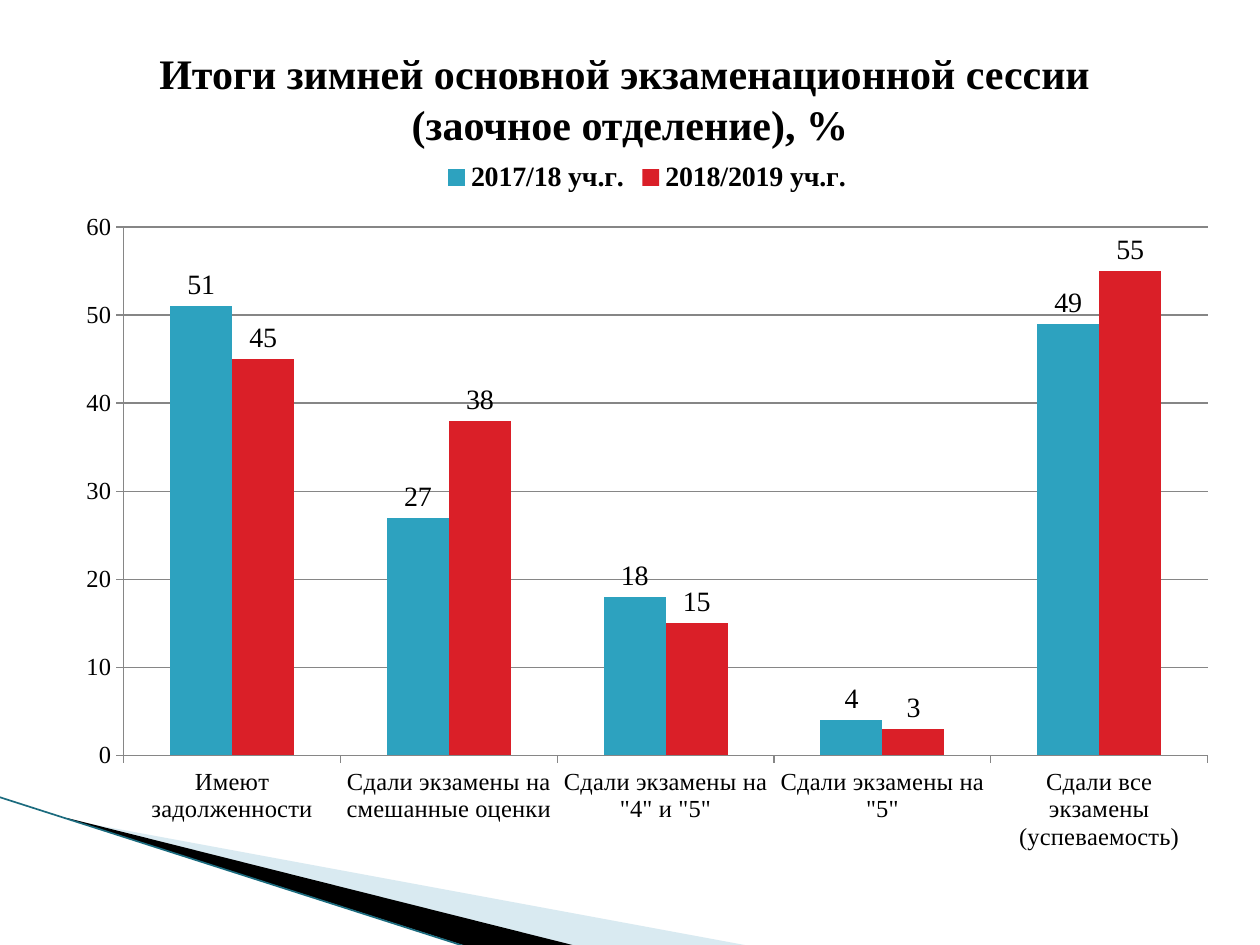
from dataclasses import dataclass, field

from lxml.etree import SubElement
from pptx import Presentation
from pptx.chart.data import CategoryChartData
from pptx.dml.color import RGBColor
from pptx.enum.chart import XL_CHART_TYPE, XL_LABEL_POSITION, XL_LEGEND_POSITION, XL_TICK_MARK
from pptx.enum.shapes import MSO_CONNECTOR
from pptx.enum.text import MSO_ANCHOR, PP_ALIGN
from pptx.oxml.ns import qn
from pptx.util import Pt

EMU_PER_PX = 914400 / 126
COLORS = {
    "text": "000000",
    "grid": "868686",
    "previous": "2DA2BF",
    "current": "DA1F28",
    "pale": "A0CBDC",
    "dark": "000000",
    "edge": "1B6B7E",
}
CATEGORIES = [
    "Имеют задолженности",
    "Сдали экзамены на смешанные оценки",
    'Сдали экзамены на "4" и "5"',
    'Сдали экзамены на "5"',
    "Сдали все экзамены (успеваемость)",
]
SERIES = [
    ("2017/18 уч.г.", "previous", (51, 27, 18, 4, 49)),
    ("2018/2019 уч.г.", "current", (45, 38, 15, 3, 55)),
]


def emu(*lengths):
    return [round(length * EMU_PER_PX) for length in lengths]


@dataclass
class SlideBuilder:
    """Holds the style and the current slide, and adds each kind of element."""

    page: object
    font_name: str = "Times New Roman"
    colors: dict = field(default_factory=lambda: COLORS)

    def color(self, name):
        return RGBColor.from_string(self.colors[name])

    def style_font(self, font, size, bold=False):
        font.name = self.font_name
        font.size = Pt(size)
        font.bold = bold
        font.color.rgb = self.color("text")

    def wedge(self, points, color, opacity=100):
        start, *rest = points
        builder = self.page.shapes.build_freeform(*start, scale=EMU_PER_PX)
        builder.add_line_segments(rest, close=True)
        shape = builder.convert_to_shape()
        shape.shadow.inherit = False
        shape.fill.solid()
        shape.fill.fore_color.rgb = self.color(color)
        shape.line.fill.background()
        if opacity < 100:
            fill_color = shape.fill._xPr.find(qn("a:solidFill"))[0]
            SubElement(fill_color, qn("a:alpha"), val=str(opacity * 1000))

    def line(self, start, end, color, width):
        connector = self.page.shapes.add_connector(
            MSO_CONNECTOR.STRAIGHT, *emu(*start, *end))
        connector.line.color.rgb = self.color(color)
        connector.line.width = Pt(width)
        SubElement(connector._element.spPr, qn("a:effectLst"))

    def title(self, text, bounds, size):
        box = self.page.shapes.add_textbox(*emu(*bounds))
        frame = box.text_frame
        frame.word_wrap = True
        frame.vertical_anchor = MSO_ANCHOR.MIDDLE
        frame.text = text
        para = frame.paragraphs[0]
        para.alignment = PP_ALIGN.CENTER
        for span in para.runs:
            self.style_font(span.font, size, bold=True)

    def style_axis(self, axis):
        axis.major_tick_mark = XL_TICK_MARK.OUTSIDE
        axis.minor_tick_mark = XL_TICK_MARK.NONE
        axis.format.line.color.rgb = self.color("grid")
        self.style_font(axis.tick_labels.font, 14)

    def column_chart(self, categories, series_rows, bounds):
        data = CategoryChartData(number_format="General")
        data.categories = categories
        for name, _, values in series_rows:
            data.add_series(name, values)
        chart = self.page.shapes.add_chart(
            XL_CHART_TYPE.COLUMN_CLUSTERED, *emu(*bounds), data).chart
        self.style_font(chart.font, 14)
        chart.has_title = False
        chart.has_legend = True
        chart.legend.position = XL_LEGEND_POSITION.TOP
        chart.legend.include_in_layout = False
        self.style_font(chart.legend.font, 16, bold=True)

        self.style_axis(chart.category_axis)
        value_axis = chart.value_axis
        self.style_axis(value_axis)
        value_axis.minimum_scale = 0
        value_axis.maximum_scale = 60
        value_axis.major_unit = 10
        value_axis.has_major_gridlines = True
        value_axis.major_gridlines.format.line.color.rgb = self.color("grid")

        plot = chart.plots[0]
        plot.vary_by_categories = False
        plot.gap_width = 150
        plot.overlap = 0
        for series, (_, color, _) in zip(plot.series, series_rows):
            series.format.fill.solid()
            series.format.fill.fore_color.rgb = self.color(color)
            labels = series.data_labels
            labels.show_value = True
            labels.position = XL_LABEL_POSITION.OUTSIDE_END
            self.style_font(labels.font, 16)


def main():
    deck = Presentation()
    deck.slide_width, deck.slide_height = emu(1260, 945)
    builder = SlideBuilder(deck.slides.add_slide(deck.slide_layouts[6]))
    builder.wedge([(69, 820), (750, 946), (575, 946), (69, 819)], "pale", opacity=40)
    builder.wedge([(67, 818), (576, 946), (469, 947), (68, 819)], "dark")
    builder.line((-1, 797), (467, 947), "edge", 0.95)
    builder.title(
        "Итоги зимней основной экзаменационной сессии \v(заочное отделение), %",
        (63, 38, 1134, 120), 24)
    builder.column_chart(CATEGORIES, SERIES, (63, 147, 1168, 718))
    deck.save("out.pptx")


if __name__ == "__main__":
    main()
